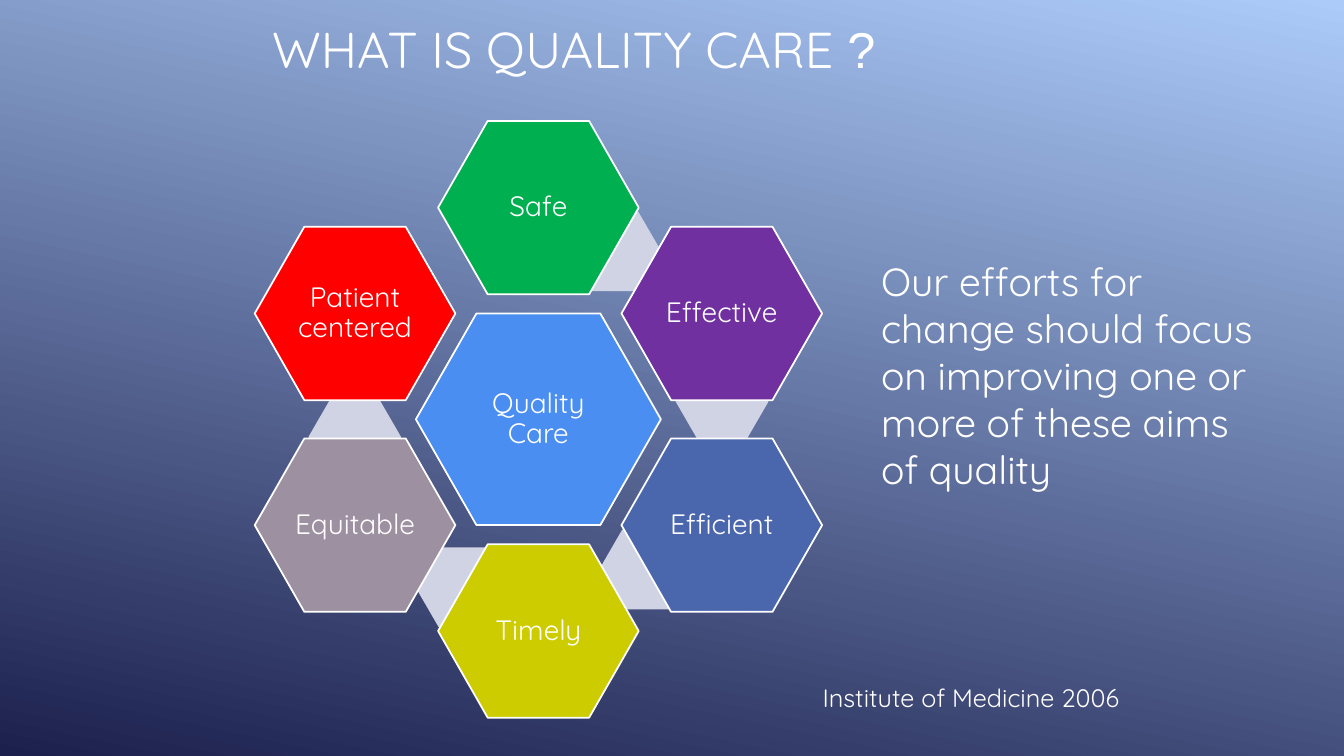
from math import cos, radians, sin

from pptx import Presentation
from pptx.dml.color import RGBColor
from pptx.enum.shapes import MSO_SHAPE as Shape
from pptx.enum.text import MSO_ANCHOR as Anchor, PP_ALIGN as Align
from pptx.util import Inches, Pt

COLORS = {
    "white": "FFFFFF", "sky": "ACCBF9", "navy": "1C204D", "link": "D0D3E3",
    "core": "4A8EF2", "green": "00B050", "purple": "7030A0", "blue": "4A66AC",
    "olive": "CCCC00", "mauve": "9D90A0", "red": "FF0000",
}
FONT = "Quicksand"
HUB = (5.34, 4.16)
AIMS = [
    ("Safe", "green"), ("Effective", "purple"), ("Efficient", "blue"),
    ("Timely", "olive"), ("Equitable", "mauve"), ("Patient centered", "red"),
]


def color(name):
    return RGBColor.from_string(COLORS[name])


def write(frame, text, size=18, font=FONT, align=Align.LEFT,
          anchor=Anchor.TOP, space=1.0, pad=(0.1, 0.05, 0.1, 0.05)):
    """Add a run to the frame's first paragraph; pad is left, top, right, bottom."""
    frame.word_wrap = True
    frame.vertical_anchor = anchor
    frame.margin_left, frame.margin_top, frame.margin_right, frame.margin_bottom = map(Inches, pad)
    para = frame.paragraphs[0]
    para.alignment = align
    para.line_spacing = space
    run = para.add_run()
    run.text = text
    run.font.size = Pt(size)
    run.font.name = font
    run.font.color.rgb = color("white")


def add_text(slide, box, text, **style):
    frame = slide.shapes.add_textbox(*map(Inches, box)).text_frame
    write(frame, text, **style)


def add_hex(slide, center, size, fill, label=None, bend=0.286):
    """Draw a hexagon around its center, outlined when it has a label."""
    (x, y), (wide, high) = center, size
    box = (x - wide / 2, y - high / 2, wide, high)
    cell = slide.shapes.add_shape(Shape.HEXAGON, *map(Inches, box))
    cell.adjustments[0] = bend
    cell.shadow.inherit = False
    cell.fill.solid()
    cell.fill.fore_color.rgb = color(fill)
    if not label:
        cell.line.fill.background()
        return
    cell.line.color.rgb = color("white")
    cell.line.width = Pt(1.25)
    write(cell.text_frame, label, size=20, align=Align.CENTER,
          anchor=Anchor.MIDDLE, space=0.9, pad=(0.03,) * 4)


def orbit(radius, angle):
    """Point around the hub, with the angle clockwise from the top."""
    turn = radians(angle)
    return HUB[0] + radius * sin(turn), HUB[1] - radius * cos(turn)


def add_title(slide):
    title = slide.shapes.title
    title.left, title.top, title.width, title.height = map(Inches, (2.06, 0.13, 7.89, 1.63))
    style = dict(size=36, pad=(0.64, 0.05, 0.1, 0.05))
    write(title.text_frame, "WHAT IS QUALITY CARE ", **style)
    write(title.text_frame, "?", font="Arial", **style)


def add_ring(slide):
    add_hex(slide, HUB, (2.43, 2.1), "core", "Quality Care")
    for step in range(len(AIMS) - 1):
        add_hex(slide, orbit(1.83, 24.5 + 60 * step), (0.92, 0.79), "link", bend=0.289)
    for step, (label, fill) in enumerate(AIMS):
        add_hex(slide, orbit(2.1, 60 * step), (1.99, 1.72), fill, label)


def paint(slide):
    fill = slide.background.fill
    fill.gradient()
    fill.gradient_angle = 258
    for stop, name, place in zip(fill.gradient_stops, ("sky", "navy"), (0, 1)):
        stop.color.rgb = color(name)
        stop.position = place


def main():
    deck = Presentation()
    deck.slide_width, deck.slide_height = Inches(13.33), Inches(7.5)
    slide = deck.slides.add_slide(deck.slide_layouts[5])
    paint(slide)
    add_title(slide)
    add_ring(slide)
    add_text(slide, (8.06, 6.72, 3.45, 0.4), "Institute of Medicine 2006")
    add_text(slide, (8.64, 1.6, 4.08, 5.18),
             "Our efforts for change should focus on improving one or more "
             "of these aims of quality", size=28, pad=(0.1, 0.95, 0.1, 0.05))
    deck.save("out.pptx")


if __name__ == "__main__":
    main()
